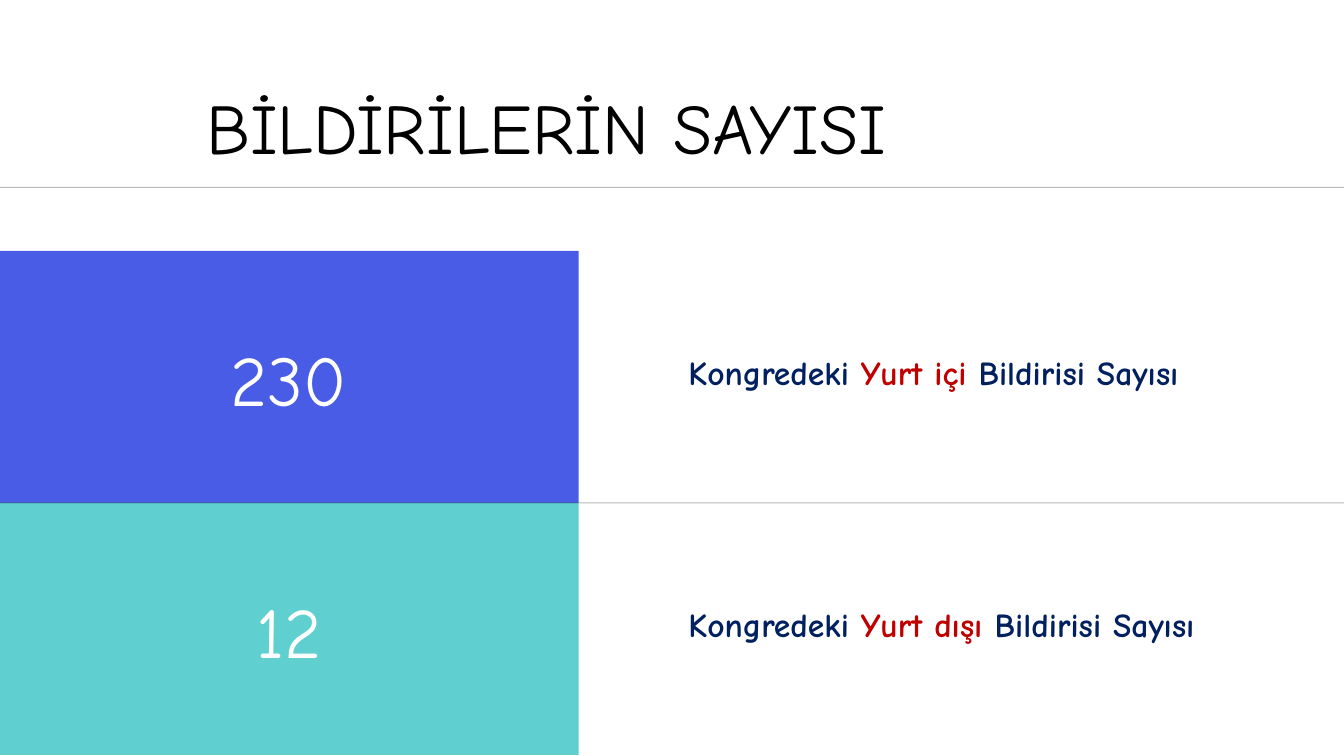
"""Build the slide with the counts of domestic and foreign papers."""
from dataclasses import dataclass

from lxml import etree
from pptx import Presentation
from pptx import util as u
from pptx.dml.color import RGBColor
from pptx.enum import shapes, text
from pptx.oxml.ns import qn
from pptx.slide import Slide
from pptx.text.text import TextFrame

Pt = u.Pt
FONT = "Comic Neue"
WIDTH, HEIGHT = 960, 540
TOP, STEP, PANEL = 179.28, 180, 413.28
COLORS = {
    "blue": "495CE6",
    "teal": "60CFCF",
    "navy": "002060",
    "red": "C00000",
    "white": "FFFFFF",
    "black": "000000",
    "line": "191918",
}


@dataclass
class Run:
    """A piece of text in one colour."""
    words: str
    color: str


@dataclass
class Row:
    """A count on a coloured panel and the origin it stands for."""
    count: str
    fill: str
    origin: str


ROWS = [Row("230", "blue", "Yurt içi "), Row("12", "teal", "Yurt dışı ")]


def tint(name: str) -> RGBColor:
    """Return a named colour."""
    return RGBColor.from_string(COLORS[name])


def write(frame: TextFrame, runs: list[Run], size: float, align: text.PP_ALIGN,
          bold: bool = False, space: float = 1.0) -> None:
    """Fill a frame without margins with one paragraph of runs."""
    frame.margin_left = frame.margin_right = Pt(0)
    frame.margin_top = frame.margin_bottom = Pt(0)
    frame.word_wrap = True
    frame.auto_size = text.MSO_AUTO_SIZE.NONE
    frame.vertical_anchor = text.MSO_ANCHOR.TOP
    para = frame.paragraphs[0]
    para.alignment = align
    para.line_spacing = space
    for item in runs:
        run = para.add_run()
        run.text = item.words
        run.font.name = FONT
        run.font.size = Pt(size)
        run.font.bold = bold
        run.font.color.rgb = tint(item.color)


def add_title(slide: Slide) -> None:
    """Place and fill the title."""
    title = slide.shapes.title
    title.left, title.top = Pt(49), Pt(59.76)
    title.width, title.height = Pt(682.56), Pt(61.2)
    write(title.text_frame, [Run("BİLDİRİLERİN SAYISI", "black")], 50.7,
          text.PP_ALIGN.CENTER)


def add_panel(slide: Slide, row: Row, top: float) -> None:
    """Draw the coloured panel of a row."""
    panel = slide.shapes.add_shape(shapes.MSO_SHAPE.RECTANGLE, Pt(0), Pt(top),
                                   Pt(PANEL), Pt(STEP))
    panel.shadow.inherit = False
    panel.fill.solid()
    panel.fill.fore_color.rgb = tint(row.fill)
    panel.line.fill.background()


def add_rule(slide: Slide, top: float) -> None:
    """Draw a faint line across the slide."""
    rule = slide.shapes.add_connector(shapes.MSO_CONNECTOR.STRAIGHT, Pt(0),
                                      Pt(top), Pt(WIDTH), Pt(top))
    rule.line.width = Pt(0.75)
    rule.line.color.rgb = tint("line")
    props = rule._element.spPr
    shade = next(props.iter(qn("a:srgbClr")))
    etree.SubElement(shade, qn("a:alpha")).set("val", "30000")
    etree.SubElement(props, qn("a:effectLst"))


def add_words(slide: Slide, row: Row, top: float) -> None:
    """Write the count and the label of a row."""
    count = slide.shapes.add_textbox(Pt(36), Pt(top + 60.48), Pt(340.56),
                                     Pt(61.2))
    write(count.text_frame, [Run(row.count, "white")], 50.7,
          text.PP_ALIGN.CENTER)
    label = slide.shapes.add_textbox(Pt(491.76), Pt(top + 58), Pt(383.04),
                                     Pt(43.92))
    runs = [Run("Kongredeki ", "navy"), Run(row.origin, "red"),
            Run("Bildirisi Sayısı", "navy")]
    write(label.text_frame, runs, 24, text.PP_ALIGN.JUSTIFY, True, 1.5)


def main() -> None:
    """Build and save the slide."""
    deck = Presentation()
    deck.slide_width, deck.slide_height = Pt(WIDTH), Pt(HEIGHT)
    slide = deck.slides.add_slide(deck.slide_layouts[5])
    add_title(slide)
    tops = [TOP + i * STEP for i in range(len(ROWS))]
    for row, top in zip(ROWS, tops):
        add_panel(slide, row, top)
    for top in (133.92, tops[1]):
        add_rule(slide, top)
    for row, top in zip(ROWS, tops):
        add_words(slide, row, top)
    deck.save("out.pptx")


if __name__ == "__main__":
    main()
